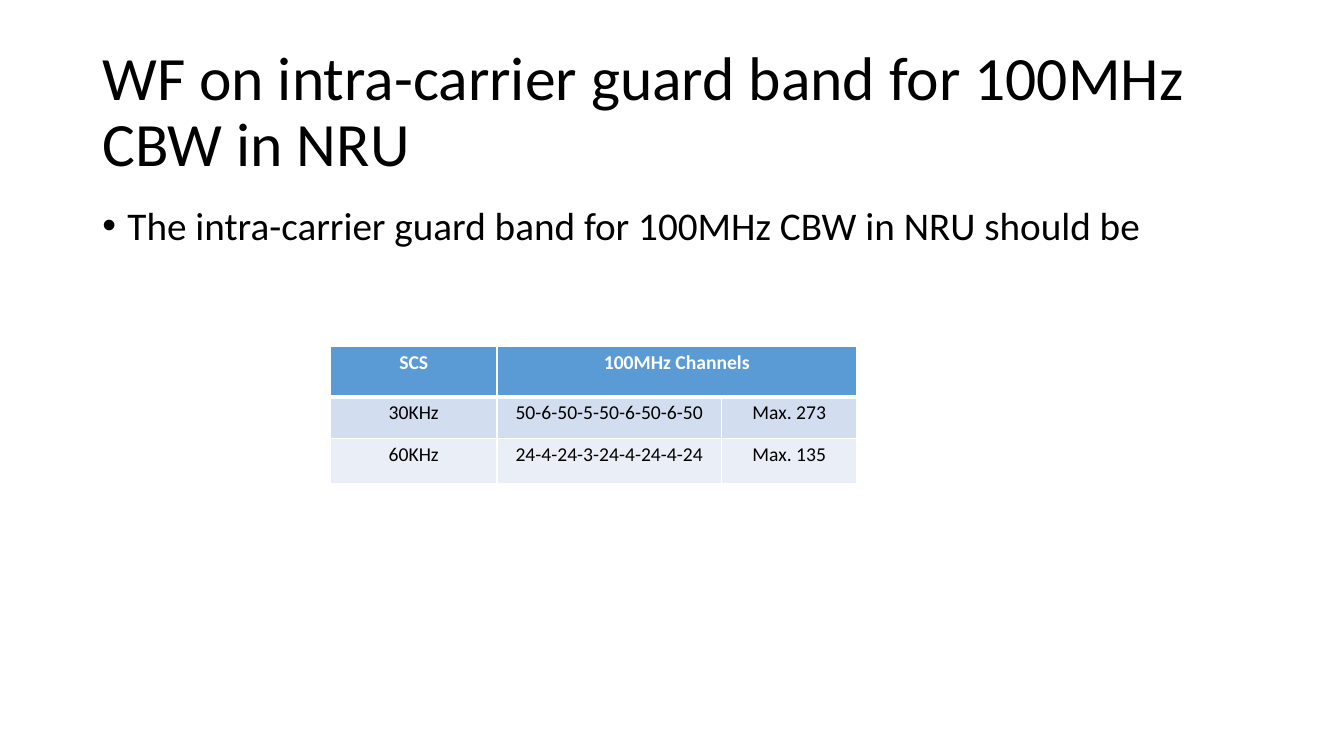
"""Build the guard band slide on a grid of 160 columns by 90 rows."""
import dataclasses
import typing

import lxml.etree
import pptx
import pptx.dml.color
import pptx.enum.text
import pptx.oxml.ns
import pptx.util

COLS, ROWS = 160, 90
ALIGN = pptx.enum.text.PP_ALIGN
ANCHOR = pptx.enum.text.MSO_ANCHOR


@dataclasses.dataclass(frozen=True)
class Theme:
    font: str = "Calibri"
    dark: str = "000000"
    light: str = "FFFFFF"
    header: str = "5B9BD5"
    bands: tuple[str, str] = ("D2DEEF", "EAEFF7")
    title_size: int = 44
    body_size: int = 28
    table_size: int = 14
    border: int = 1
    header_border: int = 3


@dataclasses.dataclass(frozen=True)
class TextBlock:
    text: str
    top: float
    height: float
    size: int
    anchor: typing.Any
    bullet: bool = False


THEME = Theme()
TEXT_LEFT, TEXT_WIDTH = 11, 138
BLOCKS = (
    TextBlock("WF on intra-carrier guard band for 100MHz CBW in NRU",
              4.8, 17.4, THEME.title_size, ANCHOR.MIDDLE),
    TextBlock("The intra-carrier guard band for 100MHz CBW in NRU should be",
              24, 57.1, THEME.body_size, ANCHOR.TOP, True),
)
TABLE_LEFT, TABLE_TOP = 39.36, 41.28
TABLE_COLS = (19.8, 26.76, 16.08)
TABLE_ROWS = (6, 4.92, 5.4)
TABLE_DATA = (
    ("SCS", "100MHz Channels", ""),
    ("30KHz", "50-6-50-5-50-6-50-6-50", "Max. 273"),
    ("60KHz", "24-4-24-3-24-4-24-4-24", "Max. 135"),
)


def grid(prs: typing.Any, col: float, row: float) -> tuple[int, int]:
    return round(prs.slide_width * col / COLS), round(prs.slide_height * row / ROWS)


def add_run(p: typing.Any, text: str, size: int, color: str, bold: bool = False) -> None:
    r = p.add_run()
    r.text = text
    r.font.name = THEME.font
    r.font.size = pptx.util.Pt(size)
    r.font.bold = bold
    r.font.color.rgb = pptx.dml.color.RGBColor.from_string(color)


def add_bullet(p: typing.Any) -> None:
    indent = pptx.util.Inches(0.25)
    ppr = p._p.get_or_add_pPr()
    ppr.set("marL", str(indent))
    ppr.set("indent", str(-indent))
    qn = pptx.oxml.ns.qn
    lxml.etree.SubElement(ppr, qn("a:buFont"), typeface="Arial")
    lxml.etree.SubElement(ppr, qn("a:buChar"), char="•")


def add_text(prs: typing.Any, s: typing.Any, block: TextBlock) -> None:
    sp = s.shapes.add_textbox(*grid(prs, TEXT_LEFT, block.top),
                              *grid(prs, TEXT_WIDTH, block.height))
    tf = sp.text_frame
    tf.word_wrap = True
    tf.vertical_anchor = block.anchor
    p = tf.paragraphs[0]
    if block.bullet:
        add_bullet(p)
    p.line_spacing = 0.9
    add_run(p, block.text, block.size, THEME.dark)


def set_borders(cell: typing.Any, bottom: int) -> None:
    qn = pptx.oxml.ns.qn
    tcpr = cell._tc.get_or_add_tcPr()
    widths = {"lnL": THEME.border, "lnR": THEME.border, "lnT": THEME.border, "lnB": bottom}
    for i, (side, width) in enumerate(widths.items()):
        ln = lxml.etree.Element(qn(f"a:{side}"), w=str(pptx.util.Pt(width)))
        fill = lxml.etree.SubElement(ln, qn("a:solidFill"))
        lxml.etree.SubElement(fill, qn("a:srgbClr"), val=THEME.light)
        tcpr.insert(i, ln)


def style_cell(cell: typing.Any, text: str, row: int) -> None:
    head = row == 0
    cell.margin_left = cell.margin_right = pptx.util.Inches(0.07)
    cell.margin_top = cell.margin_bottom = pptx.util.Inches(0.04)
    cell.fill.solid()
    color = THEME.header if head else THEME.bands[row - 1]
    cell.fill.fore_color.rgb = pptx.dml.color.RGBColor.from_string(color)
    set_borders(cell, THEME.header_border if head else THEME.border)
    if text:
        p = cell.text_frame.paragraphs[0]
        p.alignment = ALIGN.CENTER
        add_run(p, text, THEME.table_size, THEME.light if head else THEME.dark, head)


def add_channel_table(prs: typing.Any, s: typing.Any) -> None:
    frame = s.shapes.add_table(len(TABLE_ROWS), len(TABLE_COLS),
                               *grid(prs, TABLE_LEFT, TABLE_TOP),
                               *grid(prs, sum(TABLE_COLS), sum(TABLE_ROWS)))
    table = frame.table
    for column, width in zip(table.columns, TABLE_COLS):
        column.width = grid(prs, width, 0)[0]
    for row, height in zip(table.rows, TABLE_ROWS):
        row.height = grid(prs, 0, height)[1]
    table.cell(0, 1).merge(table.cell(0, 2))
    for i, texts in enumerate(TABLE_DATA):
        for j, text in enumerate(texts):
            style_cell(table.cell(i, j), text, i)


def main() -> None:
    prs = pptx.Presentation()
    prs.slide_width = pptx.util.Inches(40 / 3)
    prs.slide_height = pptx.util.Inches(7.5)
    s = prs.slides.add_slide(prs.slide_layouts[6])
    for block in BLOCKS:
        add_text(prs, s, block)
    add_channel_table(prs, s)
    prs.save("out.pptx")


if __name__ == "__main__":
    main()
